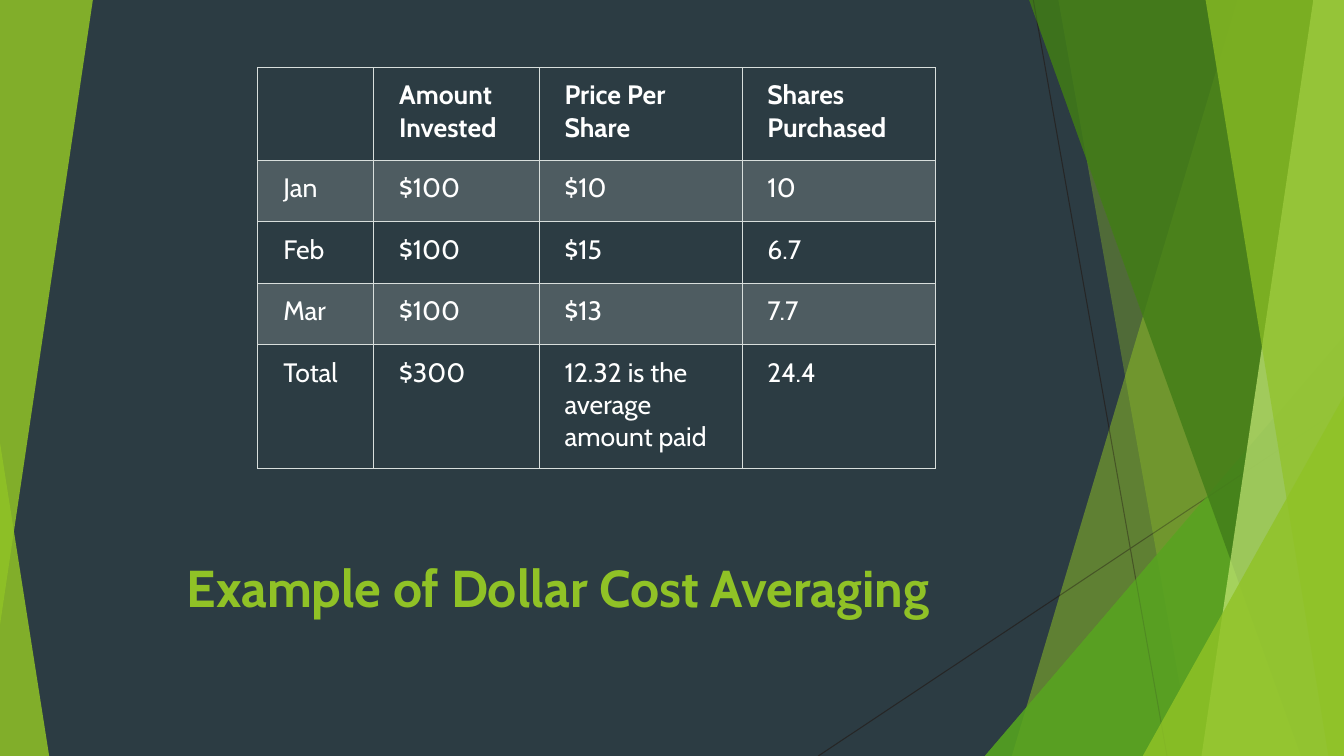
from dataclasses import dataclass

from lxml.etree import SubElement
from pptx import Presentation
from pptx.dml.color import RGBColor
from pptx.enum.shapes import MSO_CONNECTOR as Connector, MSO_SHAPE as Preset
from pptx.enum.text import MSO_ANCHOR as Anchor, MSO_AUTO_SIZE as AutoSize, PP_ALIGN as Align
from pptx.oxml.ns import qn
from pptx.util import Cm, Pt

COLORS = {
    "night": "2C3C43",
    "lime": "90C226",
    "green": "54A021",
    "forest": "3F7819",
    "pale": "C0E474",
    "ink": "262626",
    "mist": "D8DEDC",
    "white": "FFFFFF",
}
FONT = "Cabin"
WIDTH, HEIGHT = 33.87, 19.05
TOP = -0.02


@dataclass(frozen=True)
class Band:
    top_x: float
    bottom_x: float
    color: str
    opacity: int


@dataclass(frozen=True)
class Facet:
    left: float
    top: float
    width: float
    height: float
    apex: int
    color: str
    opacity: int
    rotation: int = 0


@dataclass(frozen=True)
class Ray:
    start: tuple[float, float]
    end: tuple[float, float]


RIGHT_FACETS = [
    Band(31.19, 25.5, "lime", 30),
    Band(26.67, 30.05, "lime", 20),
    Facet(24.82, 8.46, 9.05, 10.59, 1, "green", 72),
    Band(25.93, 32.79, "forest", 70),
    Band(33.1, 30.28, "pale", 70),
    Band(30.38, 33.48, "lime", 65),
    Facet(28.8, 9.98, 5.07, 9.07, 1, "lime", 80),
]
LOWER_LEFT = Facet(0, 11.15, 1.24, 7.9, 0, "lime", 85)
UPPER_LEFT = Facet(0, 0, 2.34, 15.75, 1, "lime", 85, 180)
RAYS = [Ray((26.04, 0), (29.41, HEIGHT)), Ray((WIDTH, 10.24), (20.62, HEIGHT))]

PURCHASES = [
    ["", "Amount Invested", "Price Per Share", "Shares Purchased"],
    ["Jan", "$100", "$10", "10"],
    ["Feb", "$100", "$15", "6.7"],
    ["Mar", "$100", "$13", "7.7"],
    ["Total", "$300", "12.32 is the average amount paid", "24.4"],
]
COLUMN_WIDTHS = [2.92, 4.17, 5.11, 4.88]
ROW_HEIGHTS = [2.34, 1.55, 1.55, 1.55, 3.12]


def rgb(color: str) -> RGBColor:
    return RGBColor.from_string(COLORS[color])


def fill_solid(fill, holder, color: str, opacity: int) -> None:
    fill.solid()
    fill.fore_color.rgb = rgb(color)
    tint = holder.find(qn("a:solidFill")).find(qn("a:srgbClr"))
    SubElement(tint, qn("a:alpha"), val=str(opacity * 1000))


def write(frame, text: str, *, size: float, color: str, bold: bool = False,
          line_spacing: float | None = None, space_after: float = 0) -> None:
    frame.word_wrap = True
    paragraph = frame.paragraphs[0]
    paragraph.alignment = Align.LEFT
    paragraph.line_spacing = line_spacing
    paragraph.space_before = Pt(0)
    paragraph.space_after = Pt(space_after)
    run = paragraph.add_run()
    run.text = text
    run.font.name = FONT
    run.font.size = Pt(size)
    run.font.bold = bold
    run.font.color.rgb = rgb(color)


def draw_facet(slide, facet: Band | Facet) -> None:
    if isinstance(facet, Band):
        outline = slide.shapes.build_freeform(Cm(facet.top_x), Cm(TOP))
        outline.add_line_segments([
            (Cm(WIDTH), Cm(TOP)),
            (Cm(WIDTH), Cm(HEIGHT)),
            (Cm(facet.bottom_x), Cm(HEIGHT)),
        ])
        pane = outline.convert_to_shape()
    else:
        pane = slide.shapes.add_shape(
            Preset.ISOSCELES_TRIANGLE, Cm(facet.left), Cm(facet.top),
            Cm(facet.width), Cm(facet.height))
        pane.adjustments[0] = facet.apex
        pane.rotation = facet.rotation
    pane.shadow.inherit = False
    pane.line.fill.background()
    fill_solid(pane.fill, pane._element.spPr, facet.color, facet.opacity)


def draw_ray(slide, ray: Ray) -> None:
    line = slide.shapes.add_connector(
        Connector.STRAIGHT, *map(Cm, ray.start), *map(Cm, ray.end))
    line.line.color.rgb = rgb("ink")
    line.line.width = Pt(0.75)
    SubElement(line._element.spPr, qn("a:effectLst"))


def draw_borders(cell) -> None:
    properties = cell._tc.get_or_add_tcPr()
    for side in ("lnL", "lnR", "lnT", "lnB"):
        edge = SubElement(properties, qn(f"a:{side}"), w=str(Pt(0.75)))
        paint = SubElement(edge, qn("a:solidFill"))
        SubElement(paint, qn("a:srgbClr"), val=COLORS["mist"])


def draw_purchases(slide) -> None:
    table = slide.shapes.add_table(
        len(PURCHASES), len(COLUMN_WIDTHS), Cm(6.5), Cm(1.7),
        Cm(sum(COLUMN_WIDTHS)), Cm(sum(ROW_HEIGHTS))).table
    table.first_row = False
    table.horz_banding = False
    for column, width in zip(table.columns, COLUMN_WIDTHS):
        column.width = Cm(width)
    for row, height in zip(table.rows, ROW_HEIGHTS):
        row.height = Cm(height)
    for row_index, entries in enumerate(PURCHASES):
        for column_index, entry in enumerate(entries):
            cell = table.cell(row_index, column_index)
            cell.margin_left, cell.margin_right = Cm(0.64), Cm(0.33)
            cell.margin_top = cell.margin_bottom = Cm(0.3)
            draw_borders(cell)
            if row_index % 2:
                fill_solid(cell.fill, cell._tc.tcPr, "mist", 20)
            else:
                cell.fill.background()
            if entry:
                write(cell.text_frame, entry, size=19, color="white", bold=row_index == 0)


def place_title(slide) -> None:
    title = slide.shapes.title
    title.left, title.top, title.width, title.height = map(Cm, (4.45, 12.7, 21.31, 3.02))
    title.text_frame.auto_size = AutoSize.NONE
    title.text_frame.vertical_anchor = Anchor.BOTTOM
    write(title.text_frame, "Example of Dollar Cost Averaging", size=37, color="lime",
          bold=True, line_spacing=0.9, space_after=6)
    slide.shapes._spTree.append(title._element)


def main() -> None:
    deck = Presentation()
    deck.slide_width, deck.slide_height = Cm(WIDTH), Cm(HEIGHT)
    slide = deck.slides.add_slide(deck.slide_layouts.get_by_name("Title Only"))
    slide.background.fill.solid()
    slide.background.fill.fore_color.rgb = rgb("night")
    for facet in [*RIGHT_FACETS, LOWER_LEFT]:
        draw_facet(slide, facet)
    for ray in RAYS:
        draw_ray(slide, ray)
    for facet in [*RIGHT_FACETS, UPPER_LEFT]:
        draw_facet(slide, facet)
    place_title(slide)
    draw_purchases(slide)
    deck.save("out.pptx")


if __name__ == "__main__":
    main()
